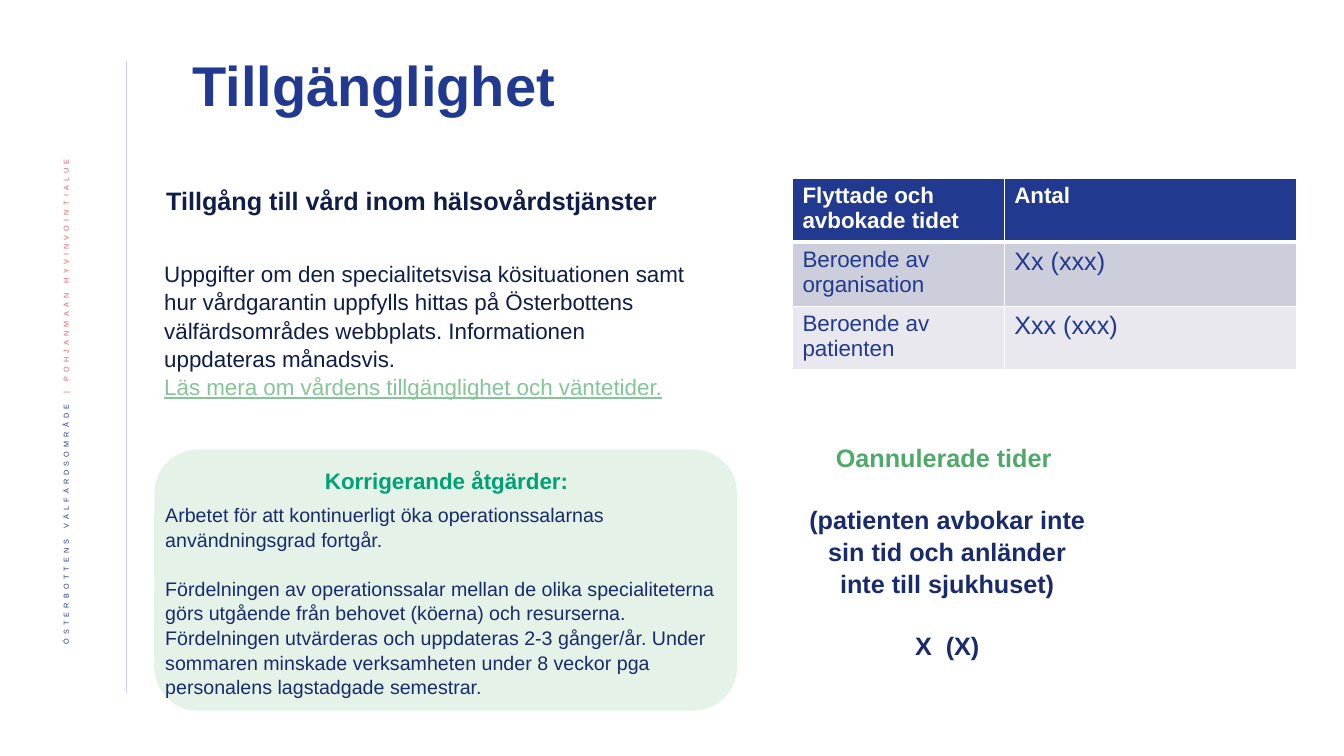
from lxml.etree import SubElement
from pptx import Presentation
from pptx.dml.color import RGBColor
from pptx.enum.shapes import MSO_CONNECTOR, MSO_SHAPE
from pptx.enum.text import MSO_ANCHOR, PP_ALIGN
from pptx.oxml.ns import qn
from pptx.util import Inches, Pt

FONT = "Arial"
WHITE, BLUE, NAVY, INK = "FFFFFF", "213A8F", "192B6B", "101D48"
CORAL, PALE_BLUE = "EB5C5F", "C9D2F2"
MINT, GREEN, TEAL = "85C598", "50A86A", "00A174"
LINE_SPACING = 1.05


def color(hex_string):
    return RGBColor.from_string(hex_string)


def set_font(font, size, hex_color, bold=False, underline=None):
    font.name = FONT
    font.size = Pt(size)
    font.color.rgb = color(hex_color)
    font.bold = bold
    font.underline = underline


def add_text(slide, box, paragraphs, align=PP_ALIGN.LEFT, anchor=MSO_ANCHOR.TOP,
             line_spacing=LINE_SPACING):
    """Add a text box; each paragraph is a dict of text, font and spacing."""
    shape = slide.shapes.add_textbox(*map(Inches, box))
    frame = shape.text_frame
    frame.word_wrap = True
    frame.vertical_anchor = anchor
    for index, item in enumerate(paragraphs):
        paragraph = frame.add_paragraph() if index else frame.paragraphs[0]
        paragraph.text = item["text"]
        paragraph.alignment = item.get("align", align)
        paragraph.line_spacing = line_spacing
        paragraph.space_before = Pt(item.get("before", 0))
        paragraph.space_after = Pt(item.get("after", 0))
        set_font(paragraph.font, item["size"], item["color"],
                 item.get("bold", False), item.get("underline"))
    return shape


def add_divider(slide):
    line = slide.shapes.add_connector(
        MSO_CONNECTOR.STRAIGHT, Inches(1.25), Inches(0.61), Inches(1.25), Inches(6.88))
    line.line.color.rgb = color(PALE_BLUE)
    line.line.width = Pt(0.5)
    SubElement(line._element.spPr, qn("a:effectLst"))


def add_side_label(slide, box, parts):
    """Add raised, letter-spaced text that reads upwards."""
    frame = slide.shapes.add_textbox(*map(Inches, box)).text_frame
    frame.word_wrap = True
    frame.vertical_anchor = MSO_ANCHOR.MIDDLE
    frame._txBody.bodyPr.set("vert", "vert270")
    paragraph = frame.paragraphs[0]
    paragraph.alignment = PP_ALIGN.RIGHT
    paragraph.line_spacing = 0.9
    for text, hex_color in parts:
        run = paragraph.add_run()
        run.text = text
        set_font(run.font, 9, hex_color)
        properties = run._r.get_or_add_rPr()
        properties.set("baseline", "30000")
        properties.set("spc", "300")


def add_panel(slide, box, hex_color, opacity):
    panel = slide.shapes.add_shape(MSO_SHAPE.ROUNDED_RECTANGLE, *map(Inches, box))
    panel.shadow.inherit = False
    panel.line.fill.background()
    panel.fill.solid()
    panel.fill.fore_color.rgb = color(hex_color)
    fill_color = panel._element.spPr.find(qn("a:solidFill")).find(qn("a:srgbClr"))
    SubElement(fill_color, qn("a:alpha"), val=str(opacity * 1000))


def set_borders(cell, **widths):
    properties = cell._tc.get_or_add_tcPr()
    for side in ("lnL", "lnR", "lnT", "lnB"):
        line = SubElement(properties, qn(f"a:{side}"), w=str(Pt(widths.get(side, 1))))
        fill = SubElement(line, qn("a:solidFill"))
        SubElement(fill, qn("a:srgbClr"), val=WHITE)


def add_table(slide, left, top, column_widths, row_height, rows, fills):
    table = slide.shapes.add_table(
        len(rows), len(column_widths), Inches(left), Inches(top),
        Inches(sum(column_widths)), Inches(row_height * len(rows))).table
    for column, width in zip(table.columns, column_widths):
        column.width = Inches(width)
    for row_index, (texts, fill) in enumerate(zip(rows, fills)):
        table.rows[row_index].height = Inches(row_height)
        header = row_index == 0
        for column_index, text in enumerate(texts):
            cell = table.cell(row_index, column_index)
            set_borders(cell, lnB=3 if header else 1, lnT=3 if row_index == 1 else 1)
            cell.fill.solid()
            cell.fill.fore_color.rgb = color(fill)
            cell.text = text
            size = 18 if column_index and not header else 16
            set_font(cell.text_frame.paragraphs[0].font, size,
                     WHITE if header else BLUE, header)


def main():
    presentation = Presentation()
    presentation.slide_width = Inches(13.33)
    presentation.slide_height = Inches(7.5)
    slide = presentation.slides.add_slide(presentation.slide_layouts[6])

    add_divider(slide)
    add_side_label(slide, (0.42, 1.42, 0.52, 5.73), [
        ("ÖSTERBOTTENS VÄLFÄRDSOMRÅDE ", BLUE),
        ("| POHJANMAAN HYVINVOINTIALUE ", CORAL)])
    add_text(slide, (1.81, 0.45, 10.98, 0.85),
             [dict(text="Tillgänglighet", size=40, color=BLUE, bold=True)],
             anchor=MSO_ANCHOR.MIDDLE, line_spacing=0.9)
    add_text(slide, (1.55, 1.77, 5.77, 0.4), [
        dict(text="Tillgång till vård inom hälsovårdstjänster",
             size=18, color=INK, bold=True)])
    add_text(slide, (1.53, 2.52, 5.51, 1.45), [
        dict(text="Uppgifter om den specialitetsvisa kösituationen samt hur "
                  "vårdgarantin uppfylls hittas på Österbottens välfärdsområdes "
                  "webbplats. Informationen uppdateras månadsvis.",
             size=16, color=INK),
        dict(text="Läs mera om vårdens tillgänglighet och väntetider.",
             size=16, color=MINT, underline=True)])

    add_panel(slide, (1.53, 4.46, 5.78, 2.59), MINT, 22)
    add_text(slide, (1.54, 4.57, 5.78, 2.34), [
        dict(text="Korrigerande åtgärder:", size=16, color=TEAL, bold=True,
             align=PP_ALIGN.CENTER, after=6),
        dict(text="Arbetet för att kontinuerligt öka operationssalarnas "
                  "användningsgrad fortgår.", size=14, color=NAVY),
        dict(text="Fördelningen av operationssalar mellan de olika specialiteterna "
                  "görs utgående från behovet (köerna) och resurserna. "
                  "Fördelningen utvärderas och uppdateras 2-3 gånger/år. Under "
                  "sommaren minskade verksamheten under 8 veckor pga "
                  "personalens lagstadgade semestrar.",
             size=14, color=NAVY, before=17)])

    add_table(slide, 7.86, 1.77, (2.1, 2.9), 0.63, [
        ("Flyttade och avbokade tidet", "Antal"),
        ("Beroende av organisation", "Xx (xxx)"),
        ("Beroende av patienten", "Xxx (xxx)")], (BLUE, "CDCEDB", "E8E8EE"))
    add_text(slide, (7.86, 4.32, 3.07, 2.22), [
        dict(text="Oannulerade tider ", size=18, color=GREEN, bold=True),
        dict(text="(patienten avbokar inte sin tid och anländer inte till sjukhuset)",
             size=18, color=NAVY, bold=True, before=22),
        dict(text="X  (X)", size=18, color=NAVY, bold=True, before=22)],
        align=PP_ALIGN.CENTER)

    presentation.save("out.pptx")


if __name__ == "__main__":
    main()
